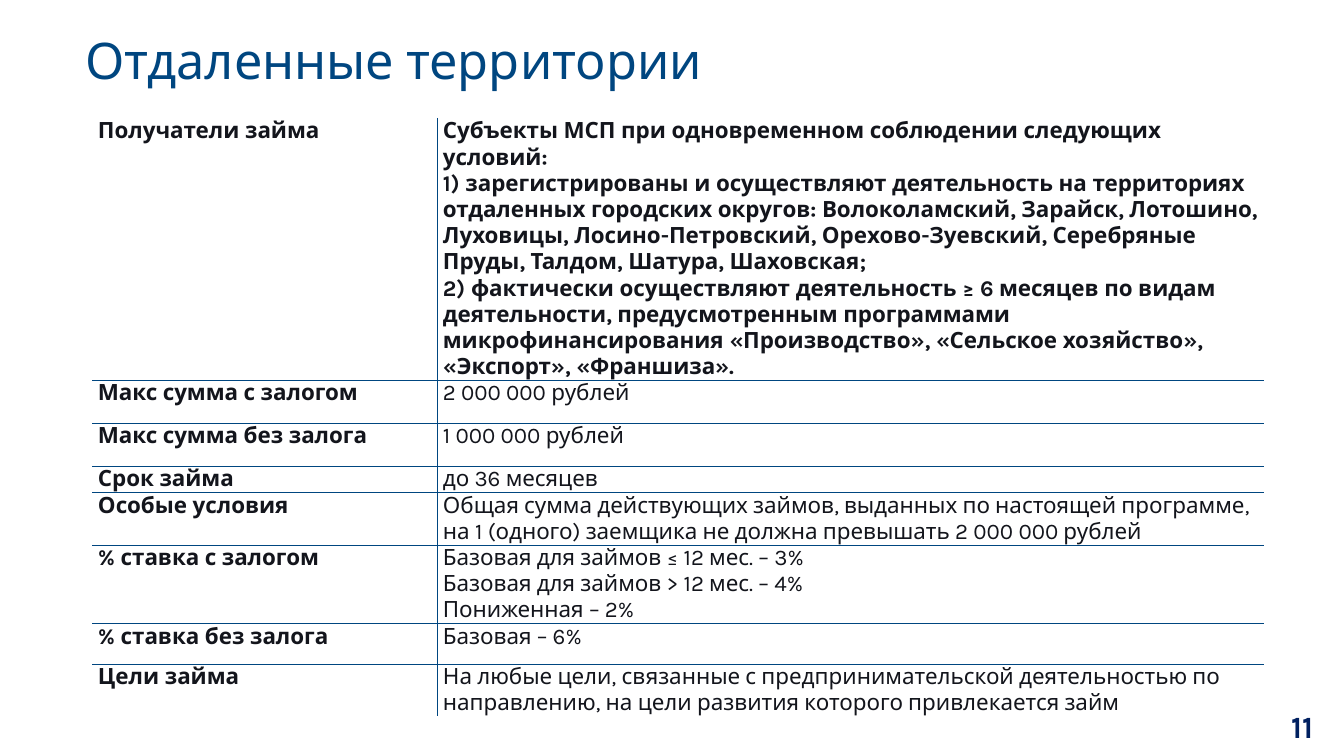
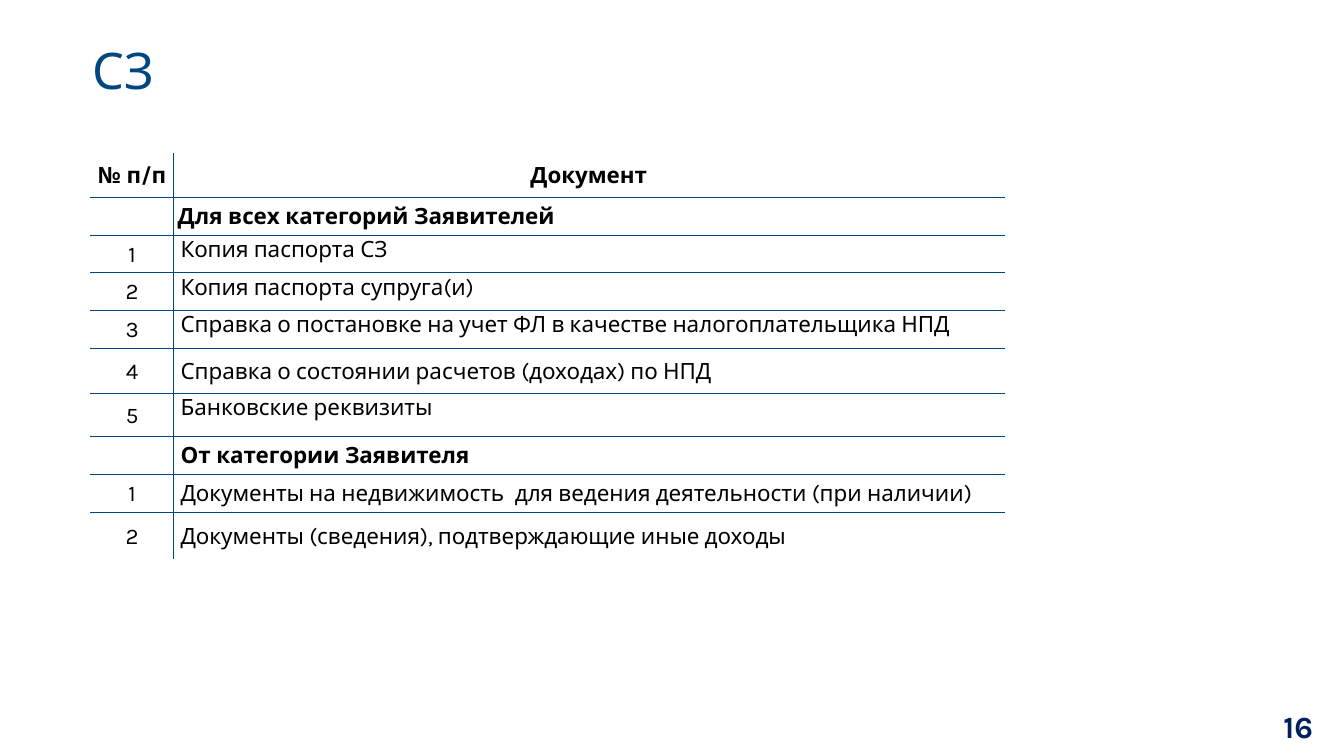
"""Build two slides on loan terms and required documents."""
import dataclasses

import lxml.etree
import pptx
import pptx.dml.color
import pptx.enum.text
import pptx.oxml.ns
import pptx.util

Pt = pptx.util.Pt
Align = pptx.enum.text.PP_ALIGN
Anchor = pptx.enum.text.MSO_ANCHOR
COLORS = {
    "rule": "004680",
    "title": "004680",
    "number": "002060",
    "ink": "13151C",
    "black": "000000",
    "white": "FFFFFF",
}


@dataclasses.dataclass
class Entry:
    text: str = ""
    bold: bool = False
    align: Align = Align.LEFT
    anchor: Anchor = Anchor.TOP
    inset: float = 3.6


class Slides:
    font_name = "Karla"

    def __init__(self):
        self.deck = pptx.Presentation()
        self.deck.slide_width = Pt(960)
        self.deck.slide_height = Pt(540)
        self.page = None

    def color(self, name):
        return pptx.dml.color.RGBColor.from_string(COLORS[name])

    def style(self, para, size, color, bold=False, align=Align.LEFT, spacing=1.0):
        para.alignment = align
        para.line_spacing = spacing
        para.space_before = Pt(0)
        para.font.name = self.font_name
        para.font.size = Pt(size)
        para.font.bold = bold
        para.font.color.rgb = self.color(color)

    def add_page(self, title, left, top, number):
        self.page = self.deck.slides.add_slide(self.deck.slide_layouts[5])
        self.title(title, left, top)
        self.page_number(number)

    def title(self, text, left, top):
        box = self.page.shapes.title
        box.left, box.top, box.width, box.height = Pt(left), Pt(top), Pt(860), Pt(68)
        self.fill_box(box, text)
        self.style(box.text_frame.paragraphs[0], 36, "title", spacing=0.9)

    def page_number(self, number):
        box = self.page.shapes.add_textbox(Pt(725), Pt(507.5), Pt(220), Pt(22.5))
        self.fill_box(box, str(number))
        self.style(box.text_frame.paragraphs[0], 22, "number", True, Align.RIGHT)

    def fill_box(self, box, text):
        frame = box.text_frame
        frame.text = text
        frame.word_wrap = True
        frame.auto_size = pptx.enum.text.MSO_AUTO_SIZE.NONE
        frame.vertical_anchor = Anchor.MIDDLE

    def border(self, cell, side, inner):
        properties = cell._tc.get_or_add_tcPr()
        name = pptx.oxml.ns.qn
        width = Pt(0.75 if inner else 1)
        line = lxml.etree.SubElement(properties, name(f"a:ln{side}"), w=str(int(width)))
        fill = lxml.etree.SubElement(line, name("a:solidFill"))
        value = COLORS["rule" if inner else "white"]
        lxml.etree.SubElement(fill, name("a:srgbClr"), val=value)

    def table(self, left, top, widths, heights, rows, color, spacing=1.0):
        table = self.page.shapes.add_table(
            len(rows), len(widths), Pt(left), Pt(top), Pt(sum(widths)), Pt(sum(heights))
        ).table
        table.first_row = table.horz_banding = False
        for column, width in zip(table.columns, widths):
            column.width = Pt(width)
        for row, height in zip(table.rows, heights):
            row.height = Pt(height)
        last_row, last_column = len(rows) - 1, len(widths) - 1
        for r, entries in enumerate(rows):
            for c, entry in enumerate(entries):
                cell = table.cell(r, c)
                inner = {"L": c > 0, "R": c < last_column, "T": r > 0, "B": r < last_row}
                for side, is_inner in inner.items():
                    self.border(cell, side, is_inner)
                self.fill_cell(cell, entry, color, spacing)

    def fill_cell(self, cell, entry, color, spacing):
        cell.fill.solid()
        cell.fill.fore_color.rgb = self.color("white")
        cell.margin_left = cell.margin_right = Pt(entry.inset)
        cell.margin_top = cell.margin_bottom = Pt(0)
        cell.vertical_anchor = entry.anchor
        cell.text_frame.text = entry.text
        for para in cell.text_frame.paragraphs:
            self.style(para, 16, color, entry.bold, entry.align, spacing)


def remote_areas(slides):
    slides.add_page("Отдаленные территории", 54, 10.8, 11)
    recipients = (
        "Субъекты МСП при одновременном соблюдении следующих условий:\n"
        "1) зарегистрированы и осуществляют деятельность на территориях отдаленных "
        "городских округов: Волоколамский, Зарайск, Лотошино, Луховицы, "
        "Лосино-Петровский, Орехово-Зуевский, Серебряные Пруды, Талдом, Шатура, "
        "Шаховская;\n"
        "2) фактически осуществляют деятельность ≥ 6 месяцев по видам деятельности, "
        "предусмотренным программами микрофинансирования «Производство», "
        "«Сельское хозяйство», «Экспорт», «Франшиза»."
    )
    rates = (
        "Базовая для займов ≤ 12 мес. – 3%\n"
        "Базовая для займов > 12 мес. – 4%\n"
        "Пониженная – 2%"
    )
    terms = [
        ("Получатели займа", recipients),
        ("Макс сумма с залогом", "2 000 000 рублей"),
        ("Макс сумма без залога", "1 000 000 рублей"),
        ("Срок займа", "до 36 месяцев"),
        (
            "Особые условия",
            "Общая сумма действующих займов, выданных по настоящей программе, "
            "на 1 (одного) заемщика не должна превышать 2 000 000 рублей",
        ),
        ("% ставка с залогом", rates),
        ("% ставка без залога", "Базовая – 6%"),
        (
            "Цели займа",
            "На любые цели, связанные с предпринимательской деятельностью по "
            "направлению, на цели развития которого привлекается займ",
        ),
    ]
    rows = [
        (Entry(label, bold=True), Entry(value, bold=value == recipients))
        for label, value in terms
    ]
    heights = [186.5, 30.5, 31, 18.5, 37, 56, 29, 37]
    slides.table(66.4, 84.6, [246.4, 589.6], heights, rows, "ink")


def self_employed(slides):
    slides.add_page("СЗ", 59, 18, 16)
    middle, top = Anchor.MIDDLE, Anchor.TOP

    def number(text, bold=False):
        return Entry(text, bold, Align.CENTER, middle, 1.5)

    def document(index, text, anchor):
        return number(str(index)), Entry(text, anchor=anchor, inset=5)

    def section(text, inset):
        return number(""), Entry(text, True, anchor=middle, inset=inset)

    rows = [
        (number("№ п/п", True), number("Документ", True)),
        section("Для всех категорий Заявителей", 3),
        document(1, "Копия паспорта СЗ", top),
        document(2, "Копия паспорта супруга(и)", top),
        document(3, "Справка о постановке на учет ФЛ в качестве налогоплательщика НПД", top),
        document(4, "Справка о состоянии расчетов (доходах) по НПД", middle),
        document(5, "Банковские реквизиты", top),
        section("От категории Заявителя", 5),
        document(1, "Документы на недвижимость  для ведения деятельности (при наличии)", middle),
        document(2, "Документы (сведения), подтверждающие иные доходы", middle),
    ]
    heights = [31.5, 27, 27, 27, 27, 32, 31, 27, 27, 34]
    slides.table(64.8, 109.4, [59.2, 593.2], heights, rows, "black", 1.07)


def main():
    slides = Slides()
    remote_areas(slides)
    self_employed(slides)
    slides.deck.save("out.pptx")


if __name__ == "__main__":
    main()
